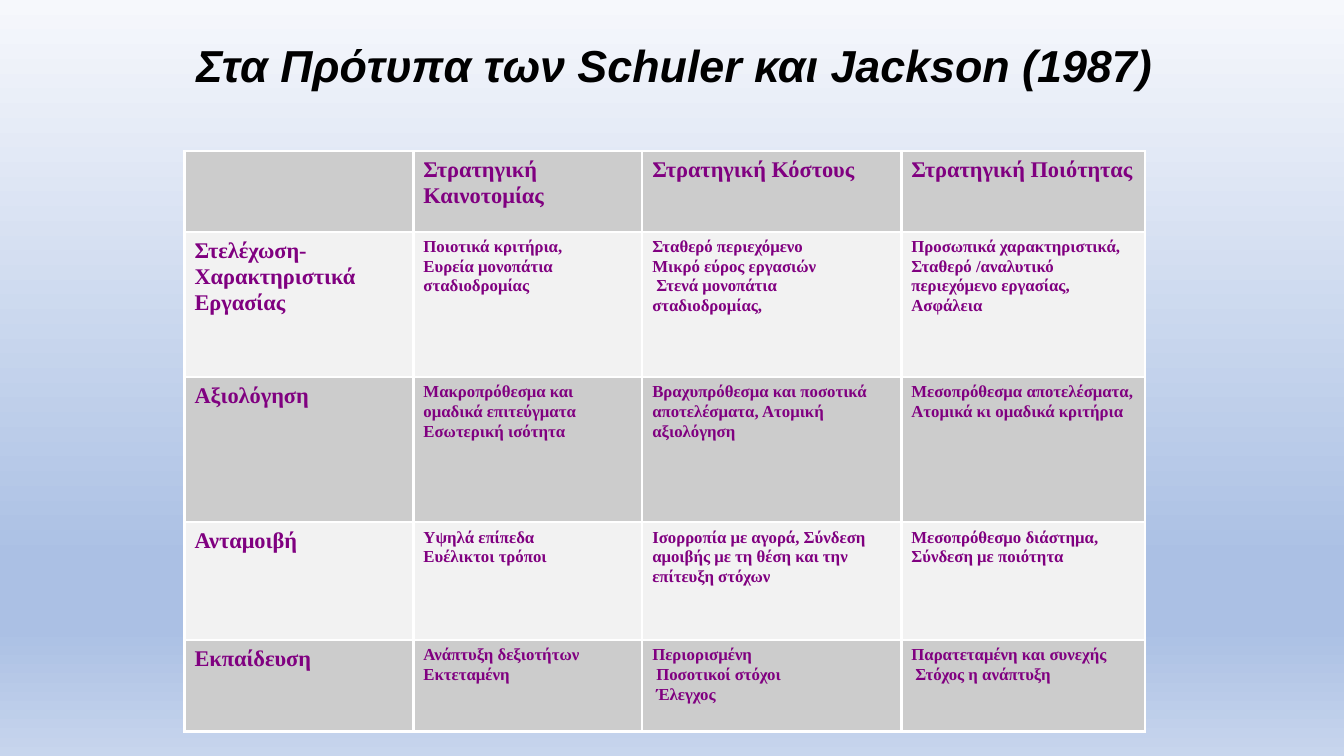
from lxml import etree
from pptx import Presentation
from pptx.dml.color import RGBColor
from pptx.enum import text
from pptx.oxml.ns import qn
from pptx.util import Inches, Pt

BLACK = RGBColor(0x00, 0x00, 0x00)
WHITE = RGBColor(0xFF, 0xFF, 0xFF)
PURPLE = RGBColor(0x80, 0x00, 0x80)
GREY = RGBColor(0xCC, 0xCC, 0xCC)
PALE = RGBColor(0xF2, 0xF2, 0xF2)
SKY_TOP = RGBColor(0xF6, 0xF8, 0xFC)
SKY_DEEP = RGBColor(0xAB, 0xC0, 0xE4)
SKY_END = RGBColor(0xC7, 0xD5, 0xED)
SKY_STOPS = [(0, SKY_TOP), (74, SKY_DEEP), (83, SKY_DEEP), (100, SKY_END)]

COLUMN_WIDTHS = [2.27, 2.27, 2.57, 2.42]
ROW_HEIGHTS = [0.8, 1.44, 1.44, 1.17, 0.91]


class Indented(str):
    """A line that starts slightly to the right."""


# One list of paragraphs per cell
STRATEGIES = [
    [[], ["Στρατηγική Καινοτομίας"], ["Στρατηγική Κόστους"],
     ["Στρατηγική Ποιότητας"]],
    [["Στελέχωση- Χαρακτηριστικά Εργασίας"],
     ["Ποιοτικά κριτήρια,", "Ευρεία μονοπάτια σταδιοδρομίας"],
     ["Σταθερό περιεχόμενο", "Μικρό εύρος εργασιών",
      Indented("Στενά μονοπάτια σταδιοδρομίας,")],
     ["Προσωπικά χαρακτηριστικά,",
      "Σταθερό /αναλυτικό περιεχόμενο εργασίας, Ασφάλεια"]],
    [["Αξιολόγηση"],
     ["Μακροπρόθεσμα και ομαδικά επιτεύγματα Εσωτερική ισότητα"],
     ["Βραχυπρόθεσμα και ποσοτικά αποτελέσματα, Ατομική αξιολόγηση"],
     ["Μεσοπρόθεσμα αποτελέσματα, Ατομικά κι ομαδικά κριτήρια"]],
    [["Ανταμοιβή"],
     ["Υψηλά επίπεδα", "Ευέλικτοι τρόποι"],
     ["Ισορροπία με αγορά, Σύνδεση αμοιβής με τη θέση και την επίτευξη στόχων"],
     ["Μεσοπρόθεσμο διάστημα, Σύνδεση με ποιότητα"]],
    [["Εκπαίδευση"],
     ["Ανάπτυξη δεξιοτήτων Εκτεταμένη"],
     ["Περιορισμένη", Indented("Ποσοτικοί στόχοι"), Indented("Έλεγχος")],
     ["Παρατεταμένη και συνεχής", Indented("Στόχος η ανάπτυξη")]],
]


def set_font(run, name, size, color, italic=None):
    run.font.name = name
    run.font.size = Pt(size)
    run.font.bold = True
    run.font.italic = italic
    run.font.color.rgb = color


def paint_background(slide):
    fill = slide.background.fill
    fill.gradient()
    fill.gradient_angle = 270
    stops = next(slide.element.iter(qn("a:gsLst")))
    for old_stop in list(stops):
        stops.remove(old_stop)
    for percent, color in SKY_STOPS:
        stop = etree.SubElement(stops, qn("a:gs"), pos=str(percent * 1000))
        etree.SubElement(stop, qn("a:srgbClr"), val=str(color))


def add_title(slide, title):
    box = slide.shapes.add_textbox(Inches(1.85), Inches(0.33),
                                   Inches(9.82), Inches(0.63))
    frame = box.text_frame
    frame.word_wrap = False
    frame.auto_size = text.MSO_AUTO_SIZE.SHAPE_TO_FIT_TEXT
    frame.vertical_anchor = text.MSO_ANCHOR.MIDDLE
    frame.text = title
    set_font(frame.paragraphs[0].runs[0], "Arial", 32, BLACK, italic=True)


def style_cell(cell, color):
    properties = cell._tc.get_or_add_tcPr()
    for side in ("a:lnL", "a:lnR", "a:lnT", "a:lnB"):
        line = etree.SubElement(properties, qn(side), w=str(Pt(2)))
        solid = etree.SubElement(line, qn("a:solidFill"))
        etree.SubElement(solid, qn("a:srgbClr"), val=str(WHITE))
    cell.fill.solid()
    cell.fill.fore_color.rgb = color


def write_cell(cell, lines, is_heading):
    frame = cell.text_frame
    frame.text = "\n".join(lines)
    for line, paragraph in zip(lines, frame.paragraphs):
        paragraph.line_spacing = 1.05
        if is_heading:
            paragraph.alignment = text.PP_ALIGN.JUSTIFY
        if isinstance(line, Indented):
            paragraph._p.get_or_add_pPr().set("indent", str(Inches(0.04)))
        set_font(paragraph.runs[0], "Times New Roman",
                 16 if is_heading else 12, PURPLE)


def add_strategy_table(slide):
    table = slide.shapes.add_table(
        len(ROW_HEIGHTS), len(COLUMN_WIDTHS), Inches(1.83), Inches(1.5),
        Inches(sum(COLUMN_WIDTHS)), Inches(sum(ROW_HEIGHTS))).table
    table.first_row = False
    table.horz_banding = False
    for column, width in zip(table.columns, COLUMN_WIDTHS):
        column.width = Inches(width)
    for row, height in zip(table.rows, ROW_HEIGHTS):
        row.height = Inches(height)
    for r, row_lines in enumerate(STRATEGIES):
        for c, lines in enumerate(row_lines):
            cell = table.cell(r, c)
            style_cell(cell, PALE if r % 2 else GREY)
            write_cell(cell, lines, is_heading=r == 0 or c == 0)


def main():
    deck = Presentation()
    deck.slide_width = Inches(13.33)
    deck.slide_height = Inches(7.5)
    slide = deck.slides.add_slide(deck.slide_layouts[6])
    paint_background(slide)
    add_strategy_table(slide)
    add_title(slide, "Στα Πρότυπα των Schuler και Jackson (1987)")
    deck.save("out.pptx")


if __name__ == "__main__":
    main()
